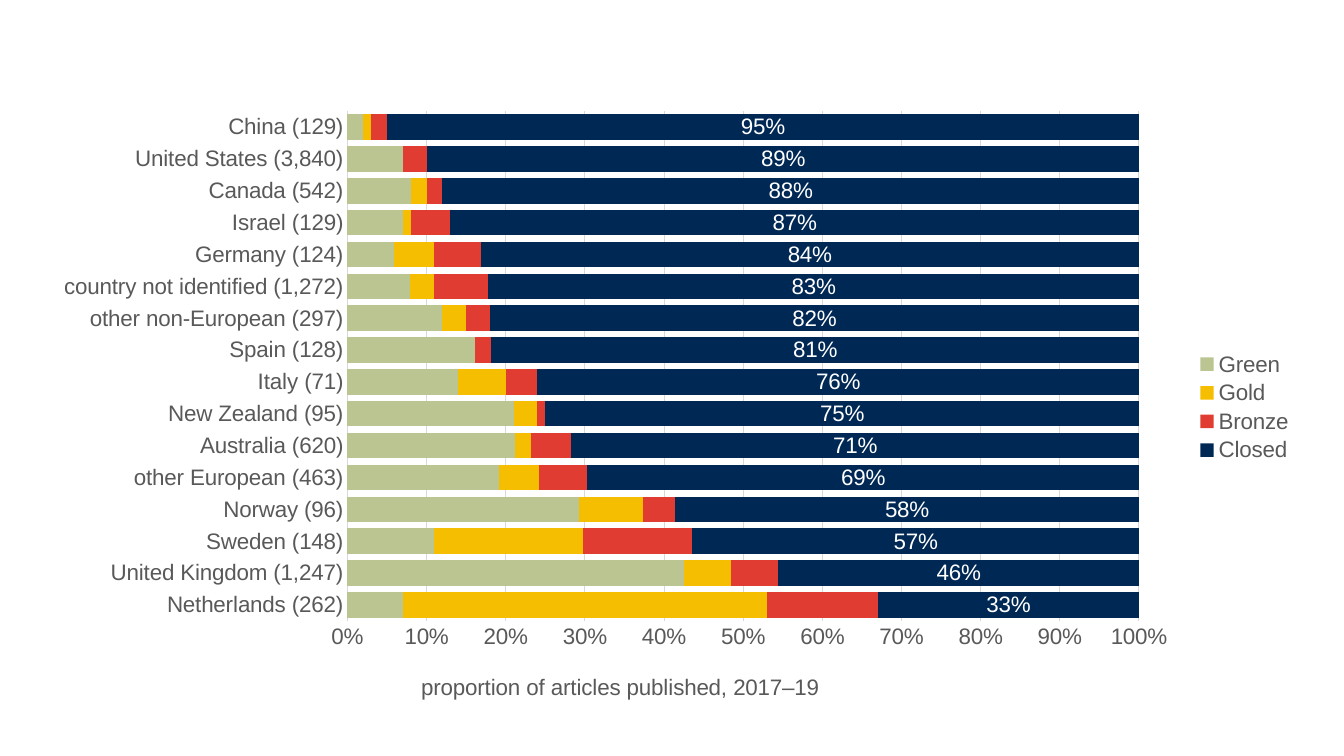
import pptx
import pptx.chart.data
import pptx.dml.color
import pptx.enum.chart
import pptx.oxml
import pptx.oxml.ns
import pptx.util

Cm = pptx.util.Cm
Pt = pptx.util.Pt
RGBColor = pptx.dml.color.RGBColor
qn = pptx.oxml.ns.qn

GREY = RGBColor(0x59, 0x59, 0x59)
RULE = RGBColor(0xD9, 0xD9, 0xD9)
WHITE = RGBColor(0xFF, 0xFF, 0xFF)
GREEN = RGBColor(0xBB, 0xC5, 0x92)
GOLD = RGBColor(0xF6, 0xBE, 0x00)
BRONZE = RGBColor(0xE0, 0x3C, 0x31)
NAVY = RGBColor(0x00, 0x28, 0x55)

COUNTRIES = [
    ("Netherlands (262)", 0.07, 0.46, 0.14, 0.33),
    ("United Kingdom (1,247)", 0.43, 0.06, 0.06, 0.46),
    ("Sweden (148)", 0.11, 0.19, 0.14, 0.57),
    ("Norway (96)", 0.29, 0.08, 0.04, 0.58),
    ("other European (463)", 0.19, 0.05, 0.06, 0.69),
    ("Australia (620)", 0.21, 0.02, 0.05, 0.71),
    ("New Zealand (95)", 0.21, 0.03, 0.01, 0.75),
    ("Italy (71)", 0.14, 0.06, 0.04, 0.76),
    ("Spain (128)", 0.16, 0, 0.02, 0.81),
    ("other non-European (297)", 0.12, 0.03, 0.03, 0.82),
    ("country not identified (1,272)", 0.08, 0.03, 0.07, 0.83),
    ("Germany (124)", 0.06, 0.05, 0.06, 0.84),
    ("Israel (129)", 0.07, 0.01, 0.05, 0.87),
    ("Canada (542)", 0.08, 0.02, 0.02, 0.88),
    ("United States (3,840)", 0.07, 0, 0.03, 0.89),
    ("China (129)", 0.02, 0.01, 0.02, 0.95),
]
ACCESS = [("Green", GREEN), ("Gold", GOLD), ("Bronze", BRONZE), ("Closed", NAVY)]


def style(font, color):
    font.name = "Arial"
    font.size = Pt(16)
    font.bold = False
    font.color.rgb = color


def place(parent, index, settings):
    for old in parent.findall(qn("c:layout")):
        parent.remove(old)
    items = "".join(f'<c:{tag} val="{val}"/>' for tag, val in settings)
    parent.insert(index, pptx.oxml.parse_xml(
        f'<c:layout {pptx.oxml.ns.nsdecls("c")}>'
        f"<c:manualLayout>{items}</c:manualLayout></c:layout>"))


prs = pptx.Presentation()
prs.slide_width = Cm(33.87)
prs.slide_height = Cm(19.05)
s = prs.slides.add_slide(prs.slide_layouts[6])

data = pptx.chart.data.CategoryChartData(number_format="0%")
data.categories = [row[0] for row in COUNTRIES]
for i, (name, color) in enumerate(ACCESS, 1):
    data.add_series(name, [row[i] for row in COUNTRIES])

chart = s.shapes.add_chart(
    pptx.enum.chart.XL_CHART_TYPE.BAR_STACKED_100,
    Cm(0.99), Cm(2.49), Cm(31.88), Cm(15.54), data).chart
style(chart.font, GREY)
chart.has_title = False
chart.has_legend = True
chart.legend.position = pptx.enum.chart.XL_LEGEND_POSITION.RIGHT
chart.legend.include_in_layout = False
style(chart.legend.font, GREY)

plot = chart.plots[0]
plot.gap_width = 25
plot.overlap = 100
plot.vary_by_categories = False
for series, (name, color) in zip(plot.series, ACCESS):
    series.format.fill.solid()
    series.format.fill.fore_color.rgb = color

labels = plot.series[3].data_labels
labels.show_value = True
labels.number_format = "0%"
labels.number_format_is_linked = False
labels.position = pptx.enum.chart.XL_LABEL_POSITION.CENTER
style(labels.font, WHITE)

for axis in (chart.category_axis, chart.value_axis):
    axis.major_tick_mark = pptx.enum.chart.XL_TICK_MARK.NONE
    axis.minor_tick_mark = pptx.enum.chart.XL_TICK_MARK.NONE
    style(axis.tick_labels.font, GREY)

shares = chart.value_axis
shares.minimum_scale = 0
shares.maximum_scale = 1
shares.major_unit = 0.1
shares.tick_labels.number_format = "0%"
shares.tick_labels.number_format_is_linked = False
shares.format.line.fill.background()
shares.has_major_gridlines = True
for line in (chart.category_axis.format.line, shares.major_gridlines.format.line):
    line.color.rgb = RULE
    line.width = Pt(0.75)

p = shares.axis_title.text_frame.paragraphs[0]
r = p.add_run()
r.text = "proportion of articles published, 2017–19"
style(r.font, GREY)

place(chart.element.chart.plotArea, 0, [
    ("layoutTarget", "inner"), ("xMode", "edge"), ("yMode", "edge"),
    ("x", 0.2436), ("y", 0.02), ("w", 0.6257), ("h", 0.8266)])
place(p._p.getparent().getparent().getparent(), 1, [
    ("xMode", "edge"), ("yMode", "edge"), ("x", 0.2986), ("y", 0.924)])

prs.save("out.pptx")
